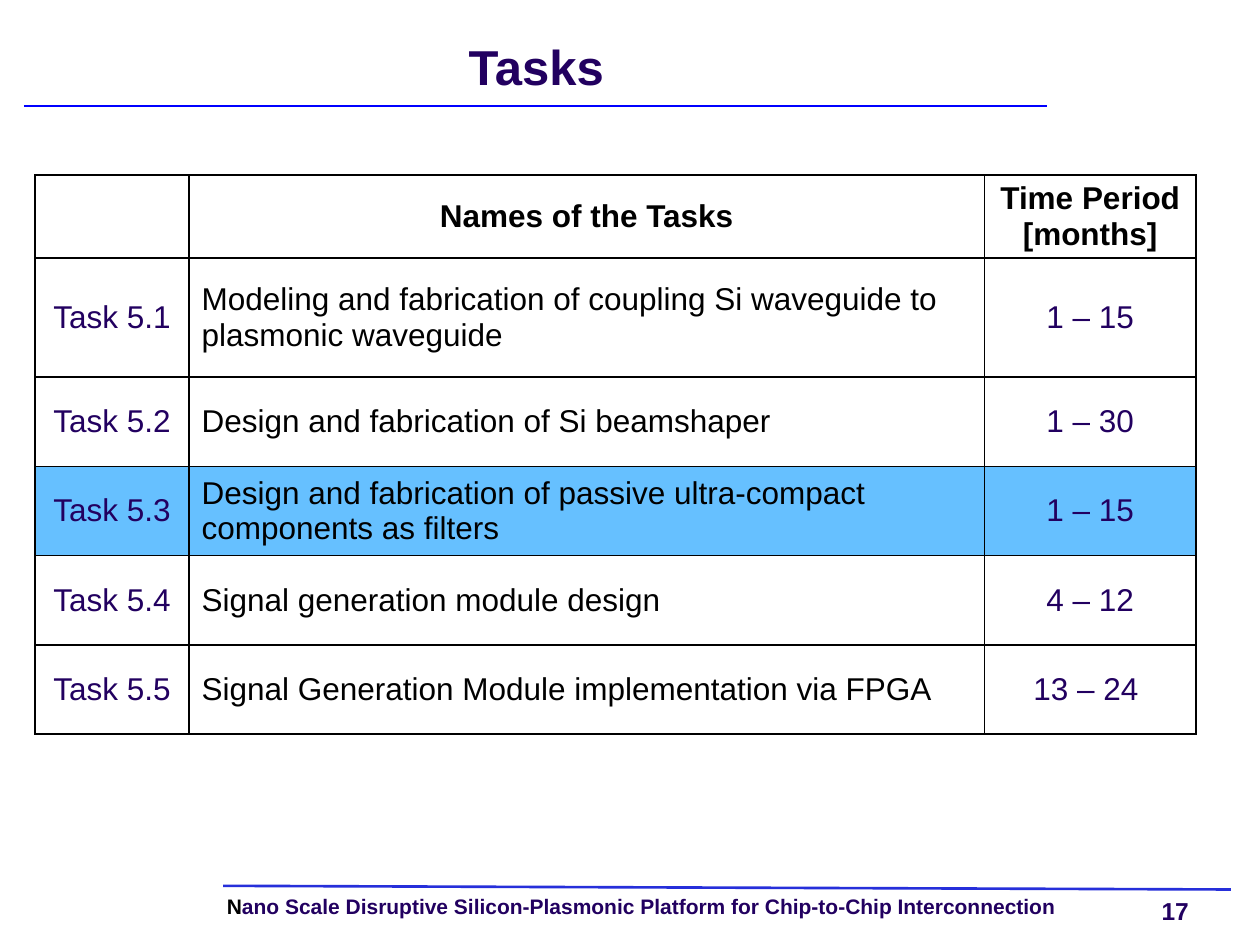
"""Build the Tasks slide with its schedule table and footer."""
import pptx
import pptx.dml.color
import pptx.enum.shapes
import pptx.enum.text
import pptx.oxml
import pptx.oxml.ns
import pptx.util
from lxml import etree

Pt = pptx.util.Pt
PP_ALIGN = pptx.enum.text.PP_ALIGN
MIDDLE = pptx.enum.text.MSO_ANCHOR.MIDDLE
COLORS = {
    "navy": "220060",
    "black": "000000",
    "title rule": "0000FF",
    "footer rule": "262FDA",
    "highlight": "66C0FF",
}
HEADER = ["", "Names of the Tasks", "Time Period [months]"]
TASKS = [
    ["Task 5.1", "Modeling and fabrication of coupling Si waveguide to plasmonic waveguide", "1 – 15"],
    ["Task 5.2", "Design and fabrication of Si beamshaper", "1 – 30"],
    ["Task 5.3", "Design and fabrication of passive ultra-compact components as filters", "1 – 15"],
    ["Task 5.4", "Signal generation module design", "4 – 12"],
    ["Task 5.5", "Signal Generation Module implementation via FPGA", "13 – 24 "],
]
HIGHLIGHTED_ROW = 3
COLUMN_WIDTHS = [88, 454.5, 121]
ROW_HEIGHTS = [47.5, 68, 51, 51, 51, 51]


def add_run(paragraph, text, size, color, bold=False):
    run = paragraph.add_run()
    run.text = text
    run.font.name = "Arial"
    run.font.size = Pt(size)
    run.font.bold = bold
    run.font.color.rgb = pptx.dml.color.RGBColor.from_string(COLORS[color])


def clear_margins(text_frame):
    text_frame.margin_left = text_frame.margin_right = 0
    text_frame.margin_top = text_frame.margin_bottom = 0


presentation = pptx.Presentation()
presentation.slide_width = Pt(720)
presentation.slide_height = Pt(540)
slide = presentation.slides.add_slide(presentation.slide_layouts[5])

title = slide.shapes.title
title.left, title.top, title.width, title.height = Pt(14.4), Pt(14.4), Pt(584), Pt(48)
clear_margins(title.text_frame)
title.text_frame.vertical_anchor = MIDDLE
paragraph = title.text_frame.paragraphs[0]
paragraph.alignment = PP_ALIGN.CENTER
paragraph.line_spacing = Pt(32)
add_run(paragraph, "Tasks", 28, "navy", True)

rules = [
    (13.7, 60.5, 598.3, 60.5, "title rule"),
    (127.5, 506.2, 703.4, 508.3, "footer rule"),
]
for start_x, start_y, end_x, end_y, color in rules:
    rule = slide.shapes.add_connector(
        pptx.enum.shapes.MSO_CONNECTOR.STRAIGHT, Pt(start_x), Pt(start_y), Pt(end_x), Pt(end_y)
    )
    rule.line.color.rgb = pptx.dml.color.RGBColor.from_string(COLORS[color])
    rule.line.width = Pt(1.5)
    etree.SubElement(rule.element.spPr, pptx.oxml.ns.qn("a:effectLst"))

table_frame = slide.shapes.add_table(
    len(ROW_HEIGHTS), len(COLUMN_WIDTHS), Pt(20), Pt(100), Pt(sum(COLUMN_WIDTHS)), Pt(sum(ROW_HEIGHTS))
)
table = table_frame.table
table.horz_banding = False
for column, width in zip(table.columns, COLUMN_WIDTHS):
    column.width = Pt(width)
for row, height in zip(table.rows, ROW_HEIGHTS):
    row.height = Pt(height)

for row_index, texts in enumerate([HEADER] + TASKS):
    for column_index, text in enumerate(texts):
        cell = table.cell(row_index, column_index)
        cell.vertical_anchor = MIDDLE
        is_header = row_index == 0
        is_name = column_index == 1
        paragraph = cell.text_frame.paragraphs[0]
        paragraph.alignment = PP_ALIGN.LEFT if is_name and not is_header else PP_ALIGN.CENTER
        if text:
            add_run(paragraph, text, 18, "black" if is_header or is_name else "navy", is_header)
        properties = cell._tc.get_or_add_tcPr()
        for side in ("lnL", "lnR", "lnT", "lnB"):
            properties.append(pptx.oxml.parse_xml(
                f'<a:{side} {pptx.oxml.ns.nsdecls("a")} w="{Pt(1)}"><a:solidFill>'
                f'<a:srgbClr val="{COLORS["black"]}"/></a:solidFill></a:{side}>'
            ))
        if row_index == HIGHLIGHTED_ROW:
            cell.fill.solid()
            cell.fill.fore_color.rgb = pptx.dml.color.RGBColor.from_string(COLORS["highlight"])
        else:
            cell.fill.background()

footer = slide.shapes.add_textbox(Pt(129.6), Pt(512), Pt(514), Pt(13))
clear_margins(footer.text_frame)
footer.text_frame.word_wrap = True
paragraph = footer.text_frame.paragraphs[0]
paragraph.line_spacing = 0.9
add_run(paragraph, "N", 12, "black", True)
add_run(
    paragraph, "ano Scale Disruptive Silicon-Plasmonic Platform for Chip-to-Chip Interconnection", 12, "navy", True
)

page_number = slide.shapes.add_textbox(Pt(663.8), Pt(512), Pt(28.8), Pt(16.6))
clear_margins(page_number.text_frame)
page_number.text_frame.word_wrap = False
add_run(page_number.text_frame.paragraphs[0], "17", 14, "navy", True)

presentation.save("out.pptx")
